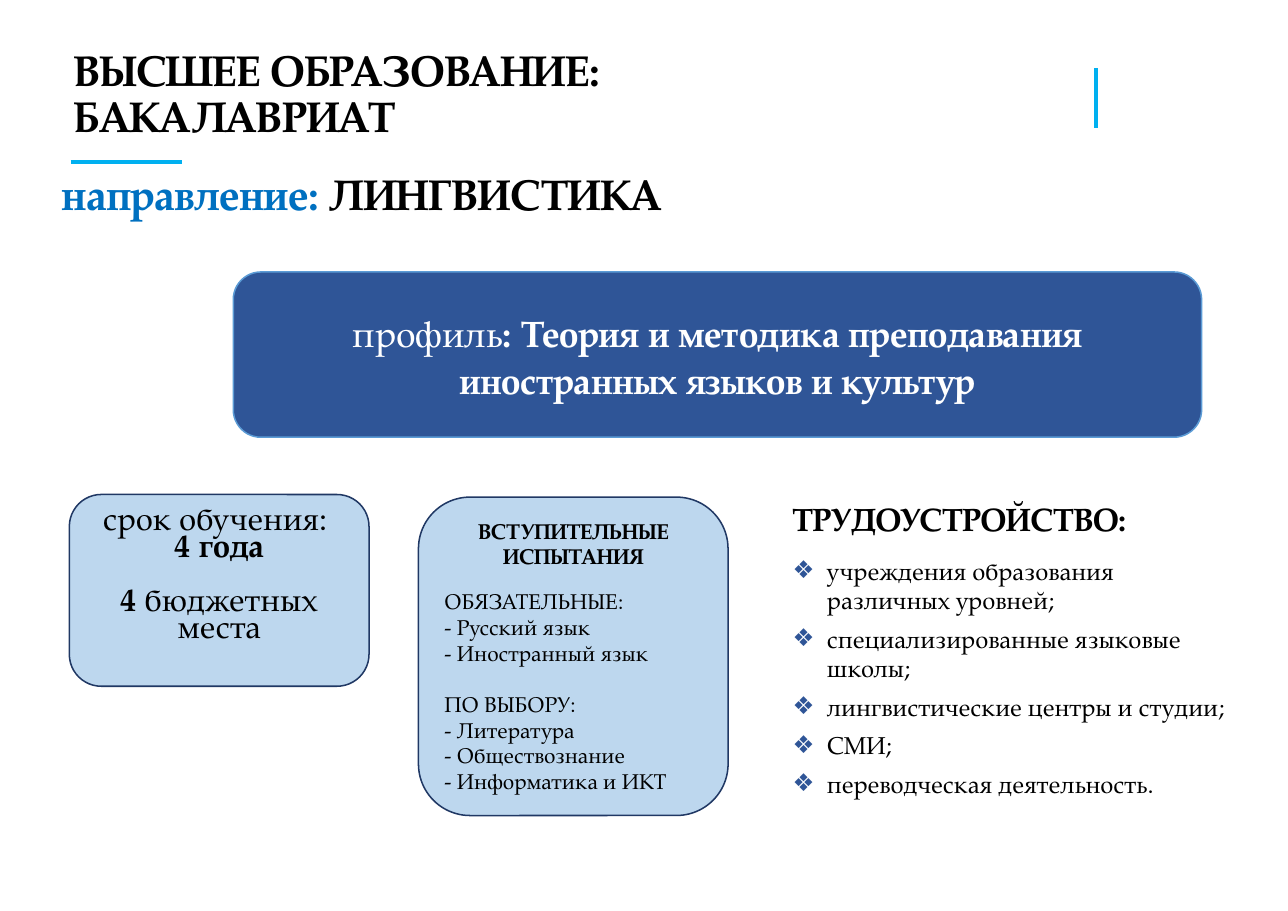
"""Slide on the bachelor's programme in linguistics."""
import pptx
import pptx.dml.color
import pptx.enum.shapes
import pptx.enum.text
import pptx.oxml
import pptx.oxml.ns
import pptx.util
from lxml import etree

Cm, Pt = pptx.util.Cm, pptx.util.Pt
KIND = pptx.enum.shapes.MSO_SHAPE
ALIGN = pptx.enum.text.PP_ALIGN
ANCHOR = pptx.enum.text.MSO_ANCHOR
FONT = "TeX Gyre Pagella"
SPACE = 'xmlns:a="http://schemas.openxmlformats.org/drawingml/2006/main"'
MARKS = [f'<a:buClr {SPACE}><a:srgbClr val="2F5597"/></a:buClr>',
         f'<a:buFont {SPACE} typeface="DejaVu Sans"/>',
         f'<a:buChar {SPACE} char="❖"/>']


def color(code):
    return pptx.dml.color.RGBColor.from_string(code)


def write(frame, rows, tone="000000", align=ALIGN.LEFT, lead=1.0):
    """Fill a frame with rows of (runs, size, space before); a run is (text, bold)."""
    frame.word_wrap = True
    for i, (runs, size, gap) in enumerate(rows):
        para = frame.paragraphs[0] if i == 0 else frame.add_paragraph()
        para.alignment, para.line_spacing = align, lead
        para.space_before = Pt(gap)
        para.font.name, para.font.size = FONT, Pt(size)
        para.font.color.rgb = color(tone)
        bolds = {bold for _, bold in runs}
        if len(bolds) == 1:
            para.font.bold = runs[0][1]
        for text, bold in runs:
            run = para.add_run()
            run.text = text
            if len(bolds) > 1:
                run.font.bold = bold
    return frame.paragraphs


deck = pptx.Presentation()
deck.slide_width, deck.slide_height = Cm(29.7), Cm(21)
slide = deck.slides.add_slide(deck.slide_layouts[6])
shapes = slide.shapes

for x1, y1, x2, y2, width in [(1.63, 3.73, 4.19, 3.73, 3),
                              (25.27, 1.57, 25.27, 2.95, 2.25)]:
    rule = shapes.add_connector(
        pptx.enum.shapes.MSO_CONNECTOR.STRAIGHT, Cm(x1), Cm(y1), Cm(x2), Cm(y2))
    rule.line.color.rgb = color("00B0F0")
    rule.line.width = Pt(width)
    etree.SubElement(rule.element.spPr, pptx.oxml.ns.qn("a:effectLst"))

title = shapes.add_textbox(Cm(1.45), Cm(1.01), Cm(22.33), Cm(2.4))
write(title.text_frame, [([("ВЫСШЕЕ ОБРАЗОВАНИЕ:", True)], 28, 0),
                         ([("БАКАЛАВРИАТ", True)], 28, 0)], lead=0.9)

field = shapes.add_textbox(Cm(1.17), Cm(3.75), Cm(21.56), Cm(1.44))
head = write(field.text_frame,
             [([("направление: ", True), ("ЛИНГВИСТИКА", True)], 28, 0)])[0]
head.runs[0].font.color.rgb = color("0070C0")

cards = []
for left, top, width, height, fill, edge, anchor in [
        (1.6, 11.4, 6.91, 4.42, "BDD7EE", "203864", ANCHOR.TOP),
        (5.38, 6.27, 22.33, 3.81, "2F5597", "5B9BD5", ANCHOR.MIDDLE),
        (9.65, 11.46, 7.14, 7.34, "BDD7EE", "203864", ANCHOR.TOP)]:
    card = shapes.add_shape(KIND.ROUNDED_RECTANGLE,
                            Cm(left), Cm(top), Cm(width), Cm(height))
    card.shadow.inherit = False
    card.fill.solid()
    card.fill.fore_color.rgb = color(fill)
    card.line.color.rgb = color(edge)
    card.line.width = Pt(1)
    card.text_frame.vertical_anchor = anchor
    cards.append(card.text_frame)
term, major, exams = cards

write(term, [
    ([("срок обучения: ", False)], 21, 0),
    ([("4 года", True)], 21, 0),
    ([("4 ", True), ("бюджетных места", False)], 21, 17.6),
], align=ALIGN.CENTER, lead=0.7)

write(major, [([
    ("профиль", False),
    (": Теория и методика преподавания иностранных языков и культур", True),
], 24, 0)], "FFFFFF", ALIGN.CENTER, 1.07)

lines = [("ВСТУПИТЕЛЬНЫЕ ИСПЫТАНИЯ", True, 0),
         ("ОБЯЗАТЕЛЬНЫЕ:", False, 12.5),
         ("- Русский язык", False, 0),
         ("- Иностранный язык", False, 0),
         ("ПО ВЫБОРУ:", False, 16.7),
         ("- Литература", False, 0),
         ("- Обществознание", False, 0),
         ("- Информатика и ИКТ", False, 0)]
paras = write(exams, [([(text, bold)], 14, gap) for text, bold, gap in lines])
paras[0].alignment = ALIGN.CENTER

jobs = ["учреждения образования различных уровней;",
        "специализированные языковые школы;",
        "лингвистические центры и студии;",
        "СМИ;",
        "переводческая деятельность."]
work = shapes.add_textbox(Cm(18.03), Cm(11.38), Cm(10.52), Cm(8.33))
rows = [([("ТРУДОУСТРОЙСТВО:", True)], 21, 0)]
rows += [([(job, False)], 16, 6 if i else 12) for i, job in enumerate(jobs)]
for para in write(work.text_frame, rows)[1:]:
    props = para._p.get_or_add_pPr()
    props.set("marL", str(Cm(0.79)))
    props.set("indent", str(-Cm(0.79)))
    last = props.find(pptx.oxml.ns.qn("a:defRPr"))
    for mark in MARKS:
        last.addprevious(pptx.oxml.parse_xml(mark))

deck.save("out.pptx")
